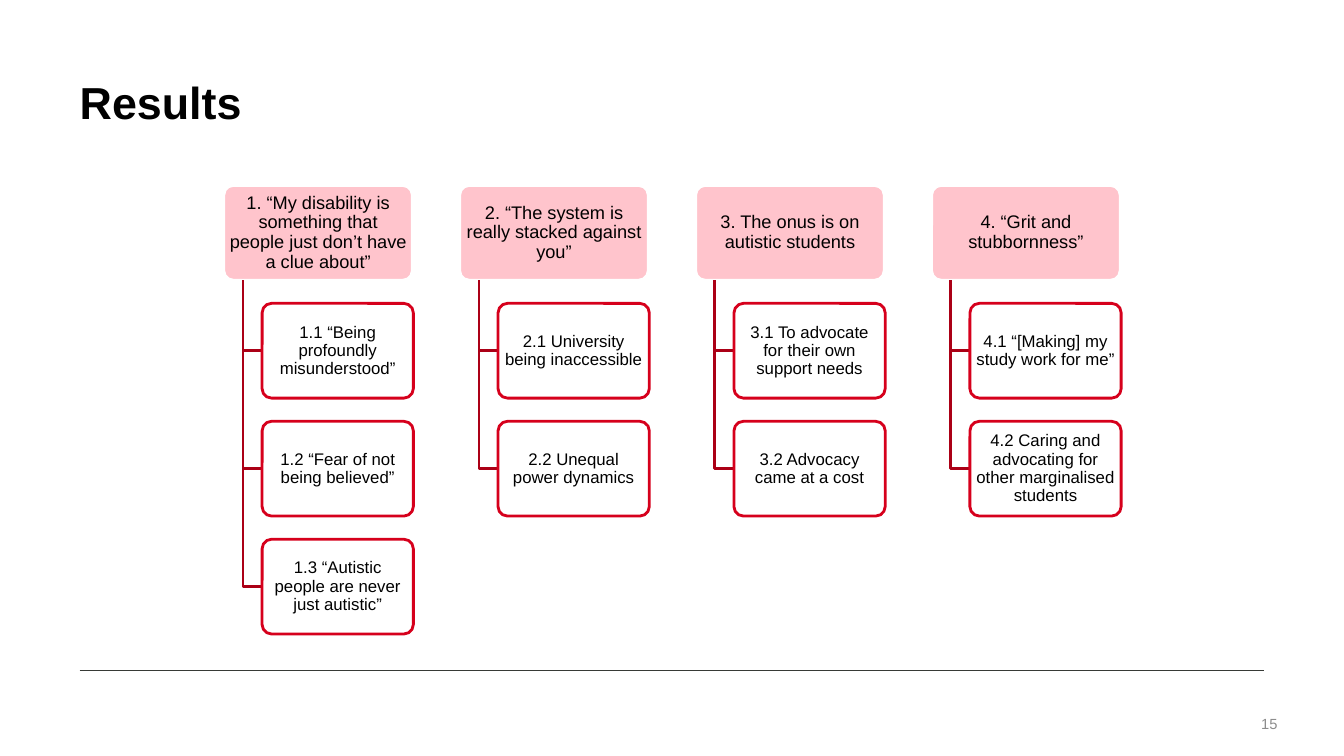
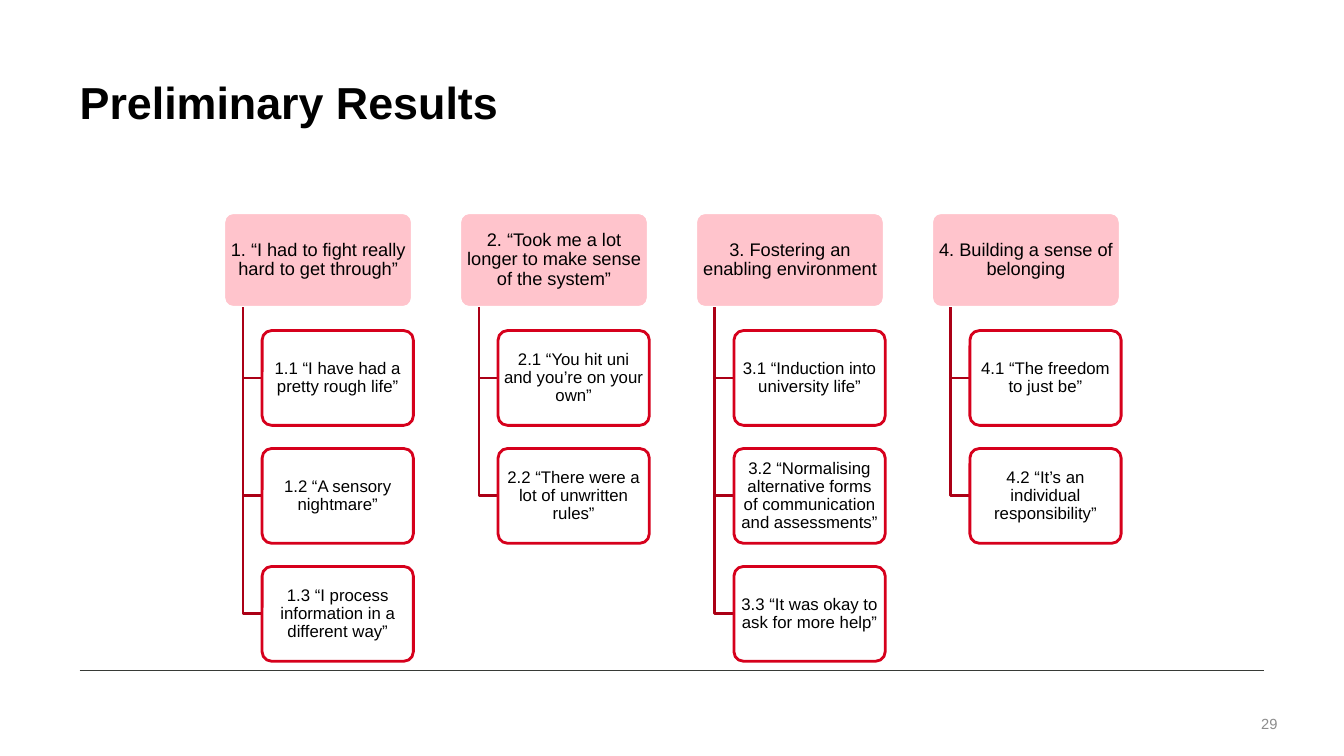
"""Build two slides that show research themes and their sub-themes as hierarchies."""
from dataclasses import dataclass

from lxml import etree
from pptx import Presentation
from pptx import util as u
from pptx.dml.color import RGBColor
from pptx.enum import shapes, text
from pptx.oxml import ns


@dataclass(frozen=True)
class Theme:
    font: str = "Arial"
    ink: str = "000000"
    muted: str = "8C8C8C"
    rule: str = "373A36"
    paper: str = "FFFFFF"
    header_fill: str = "FFC4CC"
    outline: str = "D6001C"
    branch: str = "AB0016"
    title_size: float = 32
    header_size: float = 13
    child_size: float = 12
    number_size: float = 10.5


theme = Theme()


def write_text(shape, words, size, color=theme.ink, bold=False, align="LEFT",
               anchor="TOP", inset=(0, 0), spacing=1.0):
    frame = shape.text_frame
    frame.word_wrap = True
    frame.vertical_anchor = text.MSO_ANCHOR[anchor]
    frame.margin_left = frame.margin_right = u.Inches(inset[0])
    frame.margin_top = frame.margin_bottom = u.Inches(inset[1])
    paragraph = frame.paragraphs[0]
    paragraph.text = words
    paragraph.alignment = text.PP_ALIGN[align]
    paragraph.line_spacing = spacing
    paragraph.font.name = theme.font
    paragraph.font.size = u.Pt(size)
    paragraph.font.bold = bold
    paragraph.font.color.rgb = RGBColor.from_string(color)


def add_card(slide, left, top, width, words, fill, outline, size):
    card = slide.shapes.add_shape(
        shapes.MSO_SHAPE.ROUNDED_RECTANGLE,
        u.Inches(left), u.Inches(top), u.Inches(width), u.Inches(CARD_HEIGHT))
    card.adjustments[0] = 0.1
    card.shadow.inherit = False
    card.fill.solid()
    card.fill.fore_color.rgb = RGBColor.from_string(fill)
    card.line.color.rgb = RGBColor.from_string(outline)
    card.line.width = u.Pt(2)
    write_text(card, words, size, align="CENTER", anchor="MIDDLE",
               inset=(0.03, 0.02), spacing=0.9)


CARD_HEIGHT = 0.94
HEADER_WIDTH = 1.87
CHILD_WIDTH = 1.5
FIRST_LEFT = 2.22
COLUMN_STEP = 2.34
ROW_STEP = 1.17
TRUNK_INDENT = 0.19
CHILD_INDENT = 0.38

SLIDES = [
    ("Results", "15", 1.84, [
        ("1. “My disability is something that people just don’t have a clue about”",
         ["1.1 “Being profoundly misunderstood”",
          "1.2 “Fear of not being believed”",
          "1.3 “Autistic people are never just autistic”"]),
        ("2. “The system is really stacked against you”",
         ["2.1 University being inaccessible",
          "2.2 Unequal power dynamics"]),
        ("3. The onus is on autistic students",
         ["3.1 To advocate for their own support needs",
          "3.2 Advocacy came at a cost"]),
        ("4. “Grit and stubbornness”",
         ["4.1 “[Making] my study work for me”",
          "4.2 Caring and advocating for other marginalised students"]),
    ]),
    ("Preliminary Results", "29", 2.11, [
        ("1. “I had to fight really hard to get through”",
         ["1.1 “I have had a pretty rough life”",
          "1.2 “A sensory nightmare”",
          "1.3 “I process information in a different way”"]),
        ("2. “Took me a lot longer to make sense of the system”",
         ["2.1 “You hit uni and you’re on your own”",
          "2.2 “There were a lot of unwritten rules”"]),
        ("3. Fostering an enabling environment",
         ["3.1 “Induction into university life”",
          "3.2 “Normalising alternative forms of communication and assessments”",
          "3.3 “It was okay to ask for more help”"]),
        ("4. Building a sense of belonging",
         ["4.1 “The freedom to just be”",
          "4.2 “It’s an individual responsibility”"]),
    ]),
]

presentation = Presentation()
presentation.slide_width = u.Inches(13.33)
presentation.slide_height = u.Inches(7.5)

for title, number, header_top, columns in SLIDES:
    slide = presentation.slides.add_slide(presentation.slide_layouts[6])

    footer_rule = slide.shapes.add_connector(
        shapes.MSO_CONNECTOR.STRAIGHT,
        u.Inches(0.79), u.Inches(6.65), u.Inches(12.54), u.Inches(6.65))
    footer_rule.line.color.rgb = RGBColor.from_string(theme.rule)
    footer_rule.line.width = u.Pt(0.75)
    etree.SubElement(footer_rule.element.spPr, ns.qn("a:effectLst"))

    title_box = slide.shapes.add_textbox(
        u.Inches(0.79), u.Inches(0.74), u.Inches(9.25), u.Inches(0.71))
    write_text(title_box, title, theme.title_size, bold=True)

    number_box = slide.shapes.add_textbox(
        u.Inches(9.56), u.Inches(6.98), u.Inches(3.11), u.Inches(0.4))
    write_text(number_box, number, theme.number_size, color=theme.muted,
               align="RIGHT", anchor="MIDDLE")

    for column, (header, children) in enumerate(columns):
        left = FIRST_LEFT + column * COLUMN_STEP
        trunk_left = u.Inches(left + TRUNK_INDENT)
        child_left = left + CHILD_INDENT
        add_card(slide, left, header_top, HEADER_WIDTH, header,
                 theme.header_fill, theme.paper, theme.header_size)

        for row, child in enumerate(children, start=1):
            child_top = header_top + row * ROW_STEP
            child_middle = u.Inches(child_top + CARD_HEIGHT / 2)
            builder = slide.shapes.build_freeform(
                trunk_left, u.Inches(header_top + CARD_HEIGHT))
            builder.add_line_segments(
                [(trunk_left, child_middle), (u.Inches(child_left), child_middle)],
                close=False)
            branch = builder.convert_to_shape()
            branch.shadow.inherit = False
            branch.fill.background()
            branch.line.color.rgb = RGBColor.from_string(theme.branch)
            branch.line.width = u.Pt(2)
            add_card(slide, child_left, child_top, CHILD_WIDTH, child,
                     theme.paper, theme.outline, theme.child_size)

presentation.save("out.pptx")
